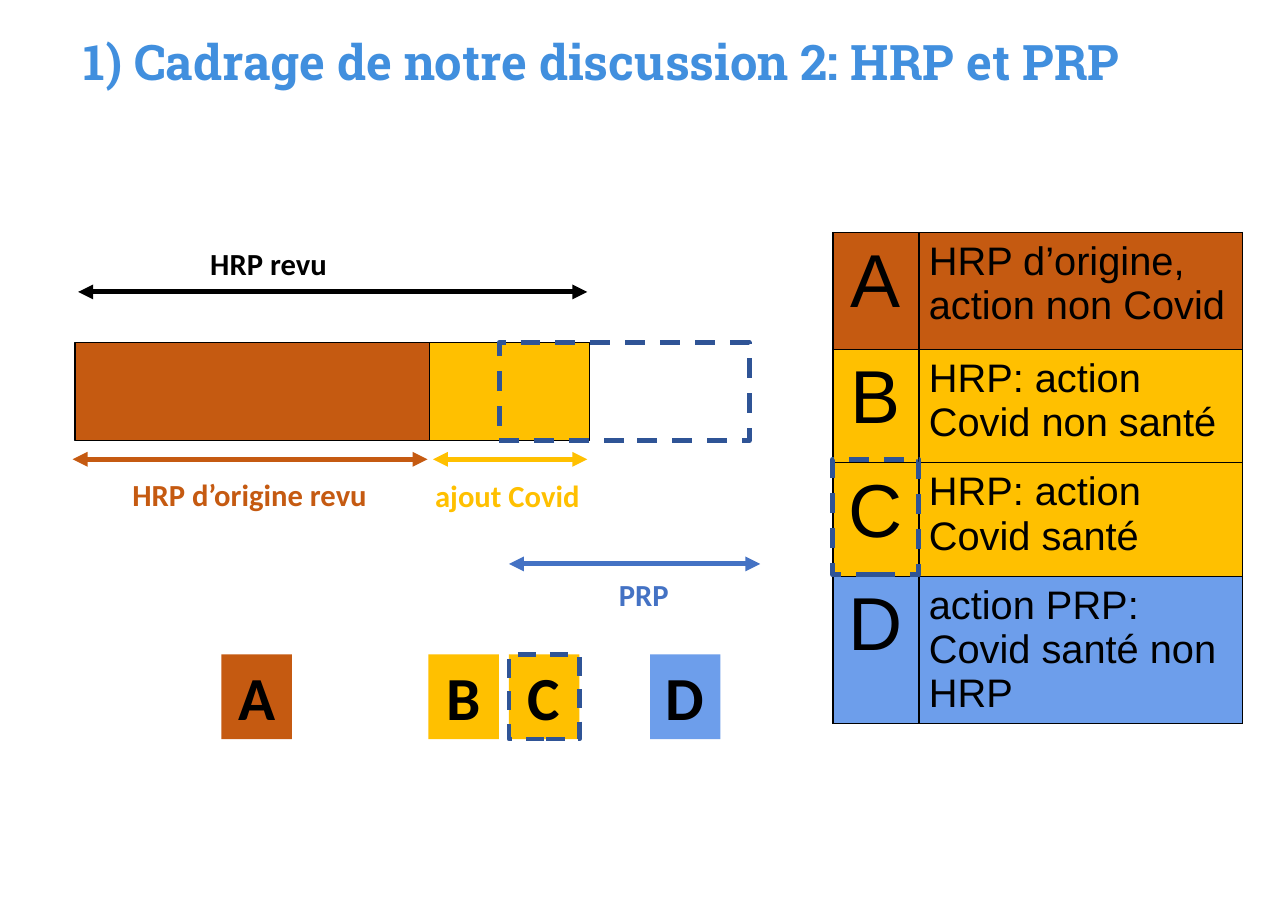
from lxml.etree import SubElement
from pptx import Presentation
from pptx.dml.color import RGBColor
from pptx.enum.dml import MSO_LINE
from pptx.enum.shapes import MSO_CONNECTOR, MSO_SHAPE
from pptx.enum.text import MSO_ANCHOR, PP_ALIGN
from pptx.oxml.ns import qn
from pptx.util import Pt

COLORS = {
    "black": "000000", "brown": "C55A11", "yellow": "FFC000", "sky": "6D9EEB",
    "navy": "2F5496", "blue": "4472C4", "title": "418FDE",
}
LABEL = {"name": "Calibri", "size": Pt(20), "bold": True}
TILE = {"name": "Calibri", "size": Pt(40), "bold": True}
TITLE = {"name": "Roboto Slab", "size": Pt(32), "bold": True}
INSETS = {"margin_left": Pt(7.2), "margin_right": Pt(7.2),
          "margin_top": Pt(3.6), "margin_bottom": Pt(3.6)}
NO_INSETS = dict.fromkeys(INSETS, 0)
CELL_INSETS = {"margin_left": Pt(6.5), "margin_right": Pt(6.5),
               "margin_top": Pt(4.5), "margin_bottom": Pt(4.5)}


def write_text(frame, text, font, color, align, spacing=0.9):
    paragraph = frame.paragraphs[0]
    paragraph.alignment = align
    paragraph.line_spacing = spacing
    run = paragraph.add_run()
    run.text = text
    for attribute, value in font.items():
        setattr(run.font, attribute, value)
    run.font.color.rgb = RGBColor.from_string(COLORS[color])


def add_box(box, fill=None, line=None, width=1, dash=None):
    shape = slide.shapes.add_shape(MSO_SHAPE.RECTANGLE, *map(Pt, box))
    shape.shadow.inherit = False
    for target, color in ((shape.fill, fill), (shape.line.fill, line)):
        if color:
            target.solid()
            target.fore_color.rgb = RGBColor.from_string(COLORS[color])
        else:
            target.background()
    if line:
        shape.line.width = Pt(width)
        shape.line.dash_style = dash
    return shape


presentation = Presentation()
presentation.slide_width, presentation.slide_height = Pt(841.68), Pt(595.44)
slide = presentation.slides.add_slide(presentation.slide_layouts[6])

# Letter tiles under the diagram
for letter, left, fill, line in (
    ("A", 144.7, "brown", None),
    ("B", 280, "yellow", None),
    ("C", 332.6, "yellow", "navy"),
    ("D", 424.8, "sky", None),
):
    tile = add_box((left, 427.7, 46, 55.4), fill, line, 3, MSO_LINE.DASH)
    for attribute, value in INSETS.items():
        setattr(tile.text_frame, attribute, value)
    tile.text_frame.vertical_anchor = MSO_ANCHOR.BOTTOM
    write_text(tile.text_frame, letter, TILE, "black", PP_ALIGN.CENTER)

# Legend table
legend = (
    ("A", "HRP d’origine, action non Covid", "brown"),
    ("B", "HRP: action Covid non santé", "yellow"),
    ("C", "HRP: action Covid santé", "yellow"),
    ("D", "action PRP: Covid santé non HRP", "sky"),
)
table = slide.shapes.add_table(4, 2, Pt(544.3), Pt(152), Pt(267.9), Pt(298.8)).table
for column, width in zip(table.columns, (56.2, 211.7)):
    column.width = Pt(width)
for row, height in zip(table.rows, (76.3, 74.2, 74.2, 74.2)):
    row.height = Pt(height)
for row, (letter, meaning, fill) in zip(table.rows, legend):
    for cell, text, size, align in zip(
        row.cells, (letter, meaning), (49, 26), (PP_ALIGN.CENTER, PP_ALIGN.LEFT)
    ):
        for attribute, value in CELL_INSETS.items():
            setattr(cell, attribute, value)
        properties = cell._tc.get_or_add_tcPr()
        for side in ("a:lnL", "a:lnR", "a:lnT", "a:lnB"):
            border = SubElement(properties, qn(side), w=str(Pt(1)))
            border_fill = SubElement(border, qn("a:solidFill"))
            SubElement(border_fill, qn("a:srgbClr"), val=COLORS["black"])
        cell.fill.solid()
        cell.fill.fore_color.rgb = RGBColor.from_string(COLORS[fill])
        font = {"name": "Arial", "size": Pt(size), "bold": False}
        write_text(cell.text_frame, text, font, "black", align, 1.0)

# Plan bars, PRP outline and outline of legend cell C
bar_top, bar_height = 223.9, 64.1
add_box((280.8, bar_top, 104.4, bar_height), "yellow", "black")
add_box((49, bar_top, 231.8, bar_height), "brown", "black")
for outline in ((326.2, bar_top, 163.4, bar_height), (544.3, 300.2, 56.2, 75.6)):
    add_box(outline, None, "navy", 3.25, MSO_LINE.DASH)

# Double-headed span arrows
for start, end, height, color in (
    (51.1, 383.8, 190.8, "black"),
    (47.5, 279.4, 300.2, "brown"),
    (283, 383.8, 300.2, "yellow"),
    (332.6, 496.8, 368.6, "blue"),
):
    arrow = slide.shapes.add_connector(
        MSO_CONNECTOR.STRAIGHT, Pt(start), Pt(height), Pt(end), Pt(height))
    arrow.line.width = Pt(3.25)
    arrow.line.color.rgb = RGBColor.from_string(COLORS[color])
    line_xml = arrow.line._get_or_add_ln()
    for arrow_end in ("a:headEnd", "a:tailEnd"):
        SubElement(line_xml, qn(arrow_end), type="triangle")
    SubElement(arrow._element.spPr, qn("a:effectLst"))

# Title and span labels
for text, box, font, color, align, insets in (
    ("1) Cadrage de notre discussion 2: HRP et PRP", (54.7, 25.2, 706.3, 83.5),
     TITLE, "title", PP_ALIGN.LEFT, NO_INSETS),
    ("HRP revu", (130.3, 159.1, 174.2, 47.5), LABEL, "black", PP_ALIGN.LEFT, INSETS),
    ("HRP d’origine revu", (56.9, 310.3, 212.4, 63.4),
     LABEL, "brown", PP_ALIGN.CENTER, INSETS),
    ("ajout Covid", (266.4, 311, 130.3, 92.9), LABEL, "yellow", PP_ALIGN.CENTER, INSETS),
    ("PRP", (397.4, 375.8, 105.1, 63.4), LABEL, "blue", PP_ALIGN.LEFT, INSETS),
):
    frame = slide.shapes.add_textbox(*map(Pt, box)).text_frame
    frame.word_wrap = True
    for attribute, value in insets.items():
        setattr(frame, attribute, value)
    write_text(frame, text, font, color, align)

presentation.save("out.pptx")
